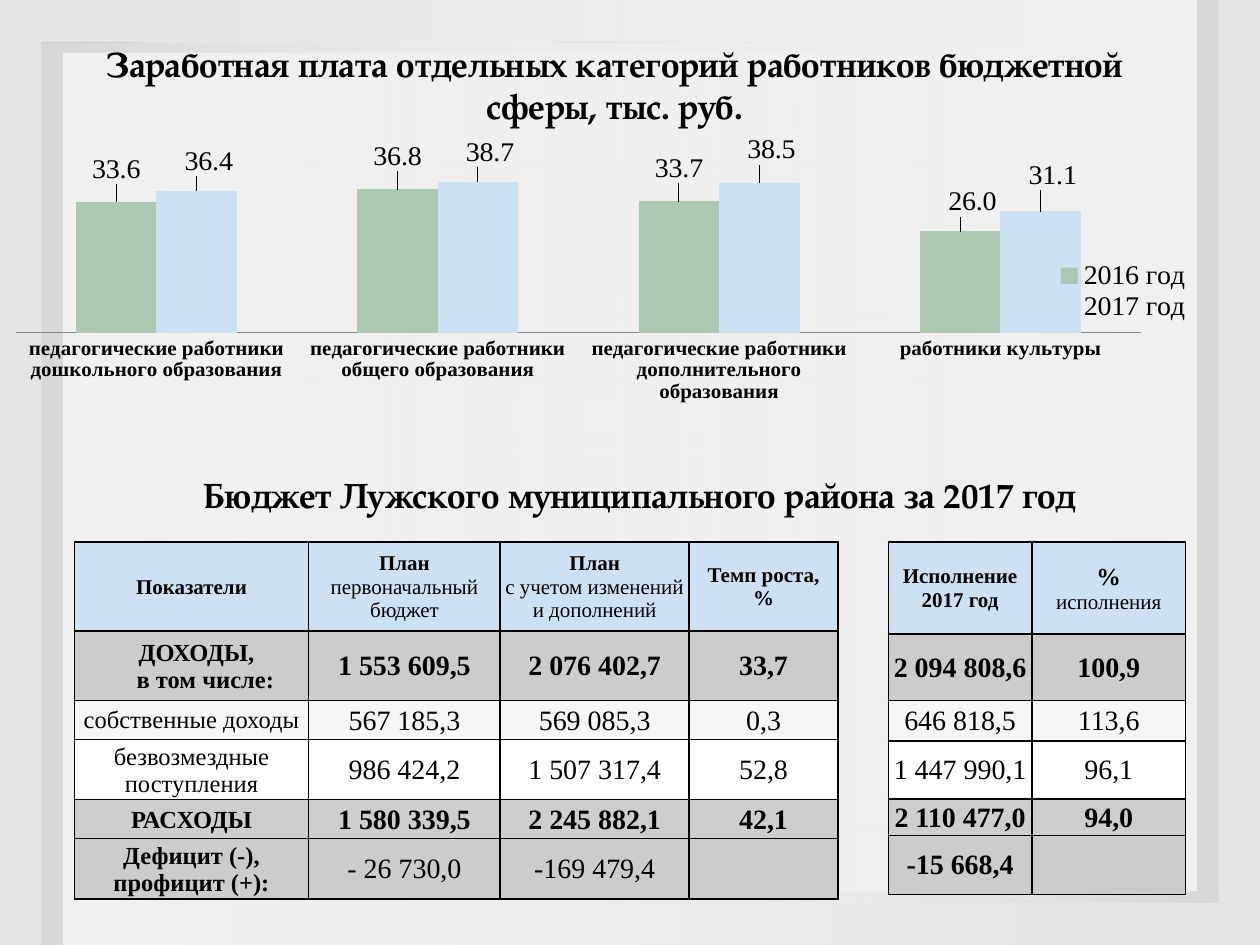
from dataclasses import dataclass
from typing import NamedTuple

from pptx import Presentation
from pptx.chart.data import CategoryChartData
from pptx.dml.color import RGBColor
from pptx.enum.chart import XL_CHART_TYPE as ChartType, XL_LABEL_POSITION as LabelPosition
from pptx.enum.chart import XL_LEGEND_POSITION as LegendPosition, XL_TICK_MARK as TickMark
from pptx.enum.shapes import MSO_SHAPE as Preset
from pptx.enum.text import MSO_ANCHOR as Anchor, PP_ALIGN as Align
from pptx.oxml import parse_xml
from pptx.oxml.ns import nsdecls, qn
from pptx.util import Inches, Pt


@dataclass(frozen=True)
class Theme:
    background: str = "E5E5E5"
    frame: str = "D8D8D8"
    white: str = "FFFFFF"
    black: str = "000000"
    axis: str = "868686"
    green: str = "ADC8B0"
    blue: str = "CCE1F4"
    row_fills: tuple = ("CCE1F4", "CCCCCC", "F4F7F4", "FFFFFF", "CECECE", "CCCCCC")
    title_font: str = "TeX Gyre Pagella"
    body_font: str = "Times New Roman"
    chart_font: str = "Roboto Condensed"
    title_size: int = 20
    value_size: int = 16
    label_size: int = 14
    header_size: int = 12
    chart_size: int = 18


THEME = Theme()


class Stop(NamedTuple):
    position: int
    color: str
    opacity: int = 100


class Band(NamedTuple):
    box: tuple
    stops: tuple
    angle: int = 0


class Line(NamedTuple):
    text: str
    size: int
    bold: bool = False
    indent: float = 0


class Title(NamedTuple):
    text: str
    box: tuple
    anchor: Anchor


class BudgetTable(NamedTuple):
    left: float
    top: float
    widths: tuple
    heights: tuple
    rows: tuple


class Series(NamedTuple):
    name: str
    color: str
    values: tuple
    label_shifts: tuple


HAZE = (Stop(0, THEME.white, 50), Stop(100, THEME.white, 0))
FADE = (Stop(0, THEME.frame), Stop(65, THEME.white, 0), Stop(100, THEME.white, 0))
SOLID = (Stop(0, THEME.frame), Stop(100, THEME.frame))
BANDS = (
    Band((0.5, 0, 9, 7.08), HAZE, 180),
    Band((0.5, 0.42, 9, 7.08), HAZE),
    Band((9.5, 0, 0.17, 7.08), SOLID),
    Band((0.33, 0.42, 0.17, 7.08), SOLID),
    Band((0.5, 7.08, 9.17, 0.08), FADE, 180),
    Band((0.33, 0.34, 9.17, 0.08), FADE),
)
TITLES = (
    Title("Бюджет Лужского муниципального района за 2017 год", (0.59, 3.67, 8.98, 0.47), Anchor.BOTTOM),
    Title("Заработная плата отдельных категорий работников бюджетной сферы, тыс. руб.",
          (0.43, 0.29, 8.9, 0.77), Anchor.TOP),
)


def header(first: str, second: str = "", second_bold: bool = False, size: int = THEME.header_size) -> tuple:
    lines = (Line(first, size, True),)
    return lines + ((Line(second, THEME.header_size, second_bold),) if second else ())


def label(text: str, bold: bool = False) -> tuple:
    return (Line(text, THEME.label_size, bold),)


def values(*texts: str, bold: bool = False) -> tuple:
    return tuple((Line(text, THEME.value_size, bold),) if text else () for text in texts)


INCOME = (Line("ДОХОДЫ,", THEME.label_size, True, 0.08), Line("в том числе:", THEME.label_size, True, 0.22))
TABLES = (
    BudgetTable(0.59, 4.3, (1.86, 1.52, 1.5, 1.18), (0.71, 0.55, 0.31, 0.44, 0.31, 0.44), (
        (header("Показатели"), header("План", "первоначальный бюджет"),
         header("План", "с учетом изменений и дополнений"), header("Темп роста,", "%", True)),
        (INCOME, *values("1 553 609,5", "2 076 402,7", "33,7", bold=True)),
        (label("собственные доходы"), *values("567 185,3", "569 085,3", "0,3")),
        (label("безвозмездные поступления"), *values("986 424,2", "1 507 317,4", "52,8")),
        (label("РАСХОДЫ", True), *values("1 580 339,5", "2 245 882,1", "42,1", bold=True)),
        (label("Дефицит (-), профицит (+):", True), *values("- 26 730,0", "-169 479,4", "")),
    )),
    BudgetTable(7.05, 4.3, (1.14, 1.22), (0.73, 0.53, 0.32, 0.46, 0.29, 0.47), (
        (header("Исполнение", "2017 год", True), header("%", "исполнения", size=THEME.label_size)),
        values("2 094 808,6", "100,9", bold=True),
        values("646 818,5", "113,6"),
        values("1 447 990,1", "96,1"),
        values("2 110 477,0", "94,0", bold=True),
        values("-15 668,4", "", bold=True),
    )),
)
CATEGORIES = ("педагогические работники дошкольного образования", "педагогические работники общего образования",
              "педагогические работники дополнительного образования", "работники культуры")
SALARIES = (
    Series("2016 год", THEME.green, (33.6, 36.8, 33.7, 26),
           ((0, -0.04), (0, -0.04), (0, -0.04), (0.01, -0.03))),
    Series("2017 год", THEME.blue, (36.4, 38.7, 38.5, 31.1),
           ((0.01, -0.03), (0.01, -0.03), (0.01, -0.04), (0.01, -0.05))),
)


def inches(box: tuple) -> list:
    return [Inches(length) for length in box]


def set_font(font, size: int, name: str = THEME.body_font, bold: bool = False) -> None:
    for attribute, value in {"size": Pt(size), "name": name, "bold": bold}.items():
        setattr(font, attribute, value)
    font.color.rgb = RGBColor.from_string(THEME.black)


def draw_band(slide, band: Band) -> None:
    shape = slide.shapes.add_shape(Preset.RECTANGLE, *inches(band.box))
    shape.shadow.inherit = False
    shape.line.fill.background()
    if band.stops == SOLID:
        shape.fill.solid()
        shape.fill.fore_color.rgb = RGBColor.from_string(THEME.frame)
        return
    shape.fill.background()
    stops = "".join(
        f'<a:gs pos="{stop.position * 1000}"><a:srgbClr val="{stop.color}">'
        f'<a:alpha val="{stop.opacity * 1000}"/></a:srgbClr></a:gs>' for stop in band.stops)
    properties = shape.element.spPr
    properties.replace(properties.find(qn("a:noFill")), parse_xml(
        f'<a:gradFill {nsdecls("a")}><a:gsLst>{stops}</a:gsLst><a:lin ang="{band.angle * 60000}"/></a:gradFill>'))


def draw_title(slide, title: Title) -> None:
    frame = slide.shapes.add_textbox(*inches(title.box)).text_frame
    frame.word_wrap = True
    frame.vertical_anchor = title.anchor
    paragraph = frame.paragraphs[0]
    paragraph.alignment = Align.CENTER
    run = paragraph.add_run()
    run.text = title.text
    set_font(run.font, THEME.title_size, THEME.title_font, True)


def fill_cell(cell, lines: tuple, color: str) -> None:
    margin = Inches(0.01)
    formats = {"margin_left": margin, "margin_right": margin, "margin_top": margin,
               "margin_bottom": 0, "vertical_anchor": Anchor.MIDDLE}
    for attribute, value in formats.items():
        setattr(cell, attribute, value)
    cell.fill.solid()
    cell.fill.fore_color.rgb = RGBColor.from_string(color)
    for index, line in enumerate(lines):
        paragraph = cell.text_frame.add_paragraph() if index else cell.text_frame.paragraphs[0]
        paragraph.alignment = Align.CENTER
        if line.indent:
            paragraph._p.get_or_add_pPr().set("marL", str(Inches(line.indent)))
        run = paragraph.add_run()
        run.text = line.text
        set_font(run.font, line.size, bold=line.bold)


def draw_table(slide, budget: BudgetTable) -> None:
    box = (budget.left, budget.top, sum(budget.widths), sum(budget.heights))
    graphic = slide.shapes.add_table(len(budget.rows), len(budget.widths), *inches(box))
    table = graphic.table
    table.first_row = table.horz_banding = False
    for column, width in zip(table.columns, budget.widths):
        column.width = Inches(width)
    for row, height, cells, color in zip(table.rows, budget.heights, budget.rows, THEME.row_fills):
        row.height = Inches(height)
        for cell, lines in zip(row.cells, cells):
            fill_cell(cell, lines, color)
    for properties in graphic.element.iter(qn("a:tcPr")):
        for index, side in enumerate("LRTB"):
            properties.insert(index, parse_xml(
                f'<a:ln{side} {nsdecls("a")} w="{Pt(1)}"><a:solidFill><a:srgbClr val="{THEME.black}"/>'
                f'</a:solidFill></a:ln{side}>'))


def manual_layout(target: str = "", **places: float):
    inner = f'<c:layoutTarget val="{target}"/>' if target else ""
    if "w" in places:
        inner += '<c:xMode val="edge"/><c:yMode val="edge"/>'
    inner += "".join(f'<c:{key} val="{value}"/>' for key, value in places.items())
    return parse_xml(f'<c:layout {nsdecls("c")}><c:manualLayout>{inner}</c:manualLayout></c:layout>')


def place(element, layout, after: str = "") -> None:
    for present in element.findall(qn("c:layout")):
        element.remove(present)
    element.insert(element.index(element.find(qn(after))) + 1 if after else 0, layout)


def draw_chart(slide) -> None:
    data = CategoryChartData(number_format="#,##0.0")
    data.categories = CATEGORIES
    for salary in SALARIES:
        data.add_series(salary.name, salary.values)
    chart = slide.shapes.add_chart(ChartType.COLUMN_CLUSTERED, *inches((0.12, 1.07, 9.61, 2.6)), data).chart
    set_font(chart.font, THEME.chart_size, THEME.chart_font)
    chart.has_title = False
    chart.has_legend = True
    chart.legend.position = LegendPosition.TOP
    chart.legend.include_in_layout = False
    set_font(chart.legend.font, THEME.value_size)
    plot = chart.plots[0]
    for attribute, value in {"gap_width": 150, "overlap": 0, "vary_by_categories": False}.items():
        setattr(plot, attribute, value)
    value_axis, category_axis = chart.value_axis, chart.category_axis
    for attribute, value in {"minimum_scale": 0, "maximum_scale": 48, "has_major_gridlines": False,
                             "visible": False}.items():
        setattr(value_axis, attribute, value)
    category_axis.major_tick_mark = TickMark.NONE
    category_axis.format.line.color.rgb = RGBColor.from_string(THEME.axis)
    set_font(category_axis.tick_labels.font, THEME.header_size, bold=True)
    for series, salary in zip(plot.series, SALARIES):
        series.format.fill.solid()
        series.format.fill.fore_color.rgb = RGBColor.from_string(salary.color)
        for index in range(len(CATEGORIES)):
            data_label = series.points[index].data_label
            set_font(data_label.font, THEME.value_size)
            data_label.position = LabelPosition.OUTSIDE_END
    shifts = [shift for salary in SALARIES for shift in salary.label_shifts]
    for element, (x, y) in zip(chart.element.iter(qn("c:dLbl")), shifts):
        place(element, manual_layout(x=x, y=y), "c:idx")
    plot_area = next(chart.element.iter(qn("c:plotArea")))
    place(plot_area, manual_layout("inner", x=0, y=0, w=0.93, h=0.59))
    legend = next(chart.element.iter(qn("c:legend")))
    place(legend, manual_layout(x=0.86, y=0.36, w=0.11, h=0.2), "c:legendPos")


def main() -> None:
    presentation = Presentation()
    presentation.slide_width, presentation.slide_height = Inches(10), Inches(7.5)
    slide = presentation.slides.add_slide(presentation.slide_layouts[6])
    slide.background.fill.solid()
    slide.background.fill.fore_color.rgb = RGBColor.from_string(THEME.background)
    for draw, items in ((draw_band, BANDS), (draw_title, TITLES), (draw_table, TABLES)):
        for item in items:
            draw(slide, item)
    draw_chart(slide)
    presentation.save("out.pptx")


if __name__ == "__main__":
    main()
